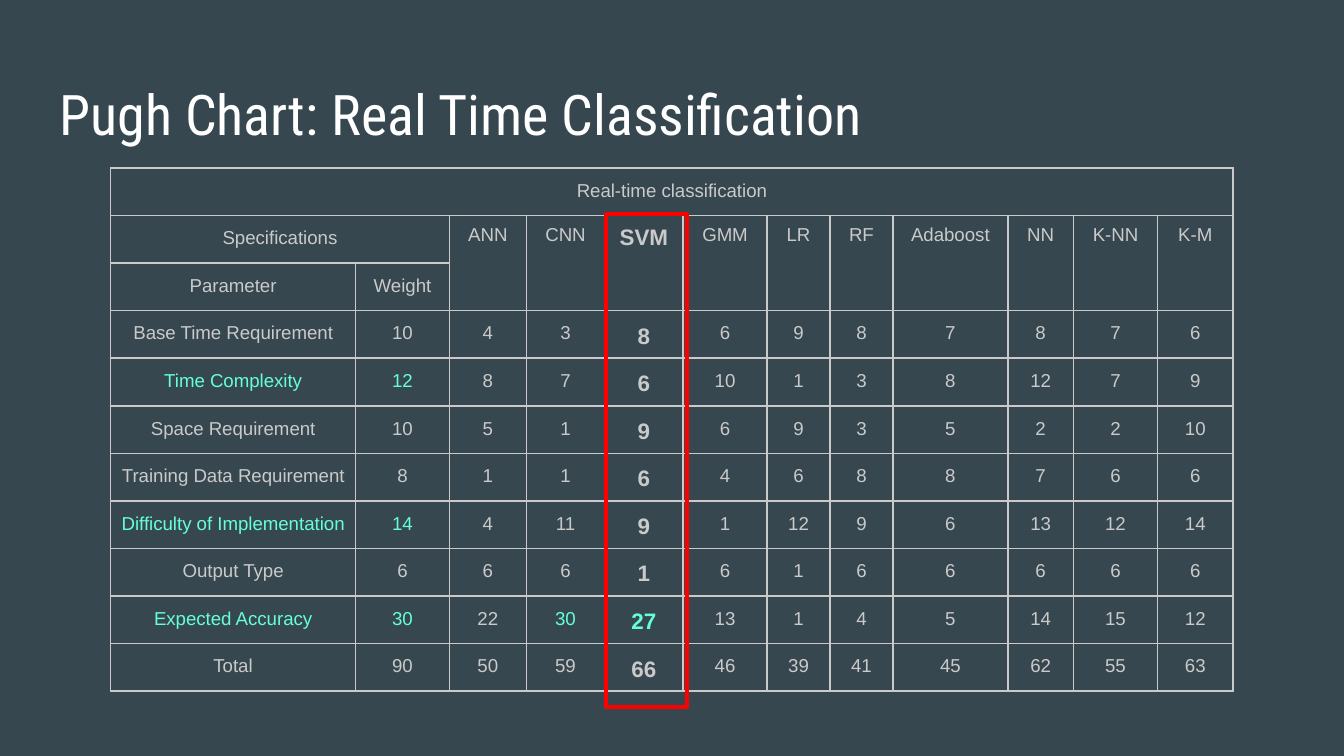
from dataclasses import dataclass

from lxml import etree
from pptx import Presentation
from pptx import util as u
from pptx.dml.color import RGBColor
from pptx.enum import shapes, text
from pptx.oxml.ns import qn

PX = 9525


@dataclass(frozen=True)
class Theme:
    background: str = "37474F"
    title: str = "FFFFFF"
    body: str = "CACACA"
    accent: str = "64FFDA"
    marker: str = "FF0000"
    title_font: str = "Roboto Condensed"
    body_font: str = "Arial"
    title_size: int = 30
    body_size: int = 10
    winner_size: int = 12
    cell_margin: int = 5
    border: int = 1
    marker_line: int = 2
    spacing: float = 1.15


class PughSlide:
    def __init__(self, deck, theme):
        self.theme = theme
        self.slide = deck.slides.add_slide(deck.slide_layouts[5])
        fill = self.slide.background.fill
        fill.solid()
        fill.fore_color.rgb = RGBColor.from_string(theme.background)

    def place(self, left, top, width, height):
        return [u.Emu(n * PX) for n in (left, top, width, height)]

    def style(self, paragraph, font, size, color, bold=False):
        paragraph.font.name = font
        paragraph.font.size = u.Pt(size)
        paragraph.font.bold = bold
        paragraph.font.color.rgb = RGBColor.from_string(color)

    def title(self, wording, *box):
        heading = self.slide.shapes.title
        heading.left, heading.top, heading.width, heading.height = self.place(*box)
        frame = heading.text_frame
        frame.text = wording
        frame.auto_size = text.MSO_AUTO_SIZE.NONE
        frame.vertical_anchor = text.MSO_ANCHOR.TOP
        frame.margin_left = frame.margin_right = u.Inches(0.1)
        frame.margin_top = frame.margin_bottom = u.Inches(0.1)
        paragraph = frame.paragraphs[0]
        paragraph.alignment = text.PP_ALIGN.LEFT
        self.style(paragraph, self.theme.title_font, self.theme.title_size, self.theme.title)

    def table(self, left, top, widths, row_height, row_count):
        box = self.place(left, top, sum(widths), row_height * row_count)
        grid = self.slide.shapes.add_table(row_count, len(widths), *box).table
        grid.first_row = grid.horz_banding = False
        for column, width in zip(grid.columns, widths):
            column.width = u.Emu(width * PX)
        for row in grid.rows:
            row.height = u.Emu(row_height * PX)
        return grid

    def cell(self, cell, wording, accent=False, winner=False, spacing=None):
        theme = self.theme
        cell.text = wording
        cell.margin_left = cell.margin_right = u.Pt(theme.cell_margin)
        cell.margin_top = cell.margin_bottom = u.Pt(theme.cell_margin)
        self.borders(cell)
        cell.fill.background()
        paragraph = cell.text_frame.paragraphs[0]
        paragraph.alignment = text.PP_ALIGN.CENTER
        paragraph.line_spacing = spacing
        size = theme.winner_size if winner else theme.body_size
        color = theme.accent if accent else theme.body
        self.style(paragraph, theme.body_font, size, color, winner)

    def borders(self, cell):
        properties = cell._tc.get_or_add_tcPr()
        for side in ("lnL", "lnR", "lnT", "lnB"):
            line = etree.SubElement(properties, qn(f"a:{side}"), w=str(u.Pt(self.theme.border)))
            fill = etree.SubElement(line, qn("a:solidFill"))
            etree.SubElement(fill, qn("a:srgbClr"), val=self.theme.body)

    def marker(self, *box):
        frame = self.slide.shapes.add_shape(shapes.MSO_SHAPE.RECTANGLE, *self.place(*box))
        frame.shadow.inherit = False
        frame.fill.background()
        frame.line.color.rgb = RGBColor.from_string(self.theme.marker)
        frame.line.width = u.Pt(self.theme.marker_line)


METHODS = ["ANN", "CNN", "SVM", "GMM", "LR", "RF", "Adaboost", "NN", "K-NN", "K-M"]
SCORES = [
    ("Base Time Requirement", 10, 4, 3, 8, 6, 9, 8, 7, 8, 7, 6),
    ("Time Complexity", 12, 8, 7, 6, 10, 1, 3, 8, 12, 7, 9),
    ("Space Requirement", 10, 5, 1, 9, 6, 9, 3, 5, 2, 2, 10),
    ("Training Data Requirement", 8, 1, 1, 6, 4, 6, 8, 8, 7, 6, 6),
    ("Difficulty of Implementation", 14, 4, 11, 9, 1, 12, 9, 6, 13, 12, 14),
    ("Output Type", 6, 6, 6, 1, 6, 1, 6, 6, 6, 6, 6),
    ("Expected Accuracy", 30, 22, 30, 27, 13, 1, 4, 5, 14, 15, 12),
    ("Total", 90, 50, 59, 66, 46, 39, 41, 45, 62, 55, 63),
]
KEY_COLUMNS = {
    "Time Complexity": (0, 1),
    "Difficulty of Implementation": (0, 1),
    "Expected Accuracy": (0, 1, 3, 4),
}
WIDTHS = [175, 67, 55, 56, 56, 60, 45, 45, 82, 47, 60, 54]
WINNER = 2 + METHODS.index("SVM")


def main():
    deck = Presentation()
    deck.slide_width, deck.slide_height = u.Emu(960 * PX), u.Emu(540 * PX)
    theme = Theme()
    pugh = PughSlide(deck, theme)
    pugh.title("Pugh Chart: Real Time Classification", 33, 47, 895, 60)

    last = len(WIDTHS) - 1
    rows = [
        ["Real-time classification"] + [""] * last,
        ["Specifications", ""] + METHODS,
        ["Parameter", "Weight"] + [""] * len(METHODS),
        *SCORES,
    ]
    grid = pugh.table(79, 120, WIDTHS, 34, len(rows))
    for r, row in enumerate(rows):
        for c, value in enumerate(row):
            pugh.cell(
                grid.cell(r, c),
                str(value),
                accent=c in KEY_COLUMNS.get(row[0], ()),
                winner=c == WINNER and r > 0,
                spacing=None if r in (1, 2) and c > 1 else theme.spacing,
            )
    grid.cell(0, 0).merge(grid.cell(0, last))
    grid.cell(1, 0).merge(grid.cell(1, 1))
    for c in range(2, len(WIDTHS)):
        grid.cell(1, c).merge(grid.cell(2, c))

    pugh.marker(433, 153, 58, 352)
    deck.save("out.pptx")


if __name__ == "__main__":
    main()
